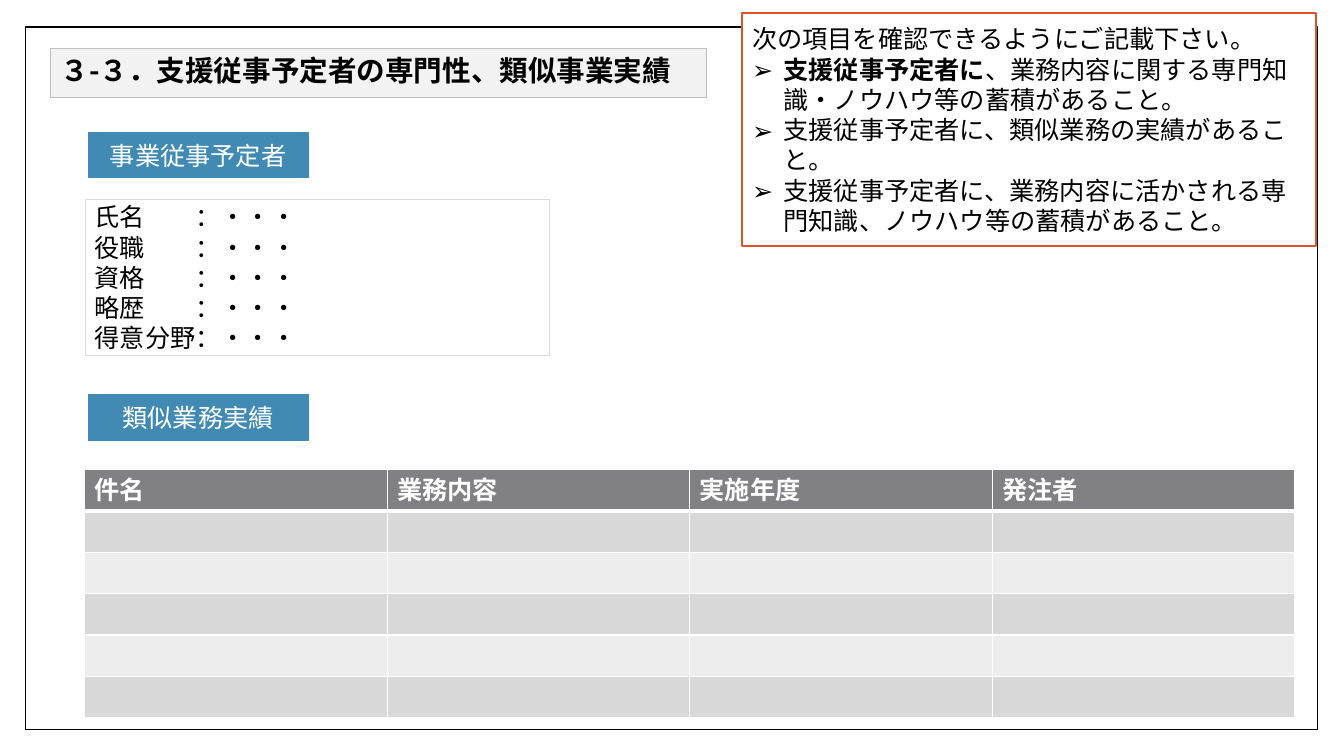
import pptx
import pptx.util
import pptx.dml.color
import pptx.enum.shapes
import pptx.enum.text
import pptx.oxml.ns
import lxml.etree

PX = 9144
SLIDE = (1333, 750)
NOTO = "Noto Sans CJK JP"
LEFT = pptx.enum.text.PP_ALIGN.LEFT
CENTER = pptx.enum.text.PP_ALIGN.CENTER

FRAME = (25, 27, 1282, 697)
TITLE = "３-３．支援従事予定者の専門性、類似事業実績"
TITLE_BOX = (50, 48, 651, 49)
SECTIONS = [("事業従事予定者", 128), ("類似業務実績", 388)]
SECTION_LEFT, SECTION_WIDTH, SECTION_HEIGHT = 84, 225, 52
PROFILE = [
    "氏名　　：・・・",
    "役職　　：・・・",
    "資格　　：・・・",
    "略歴　　：・・・",
    "得意分野：・・・",
]
PROFILE_BOX = (84, 198, 461, 154)
GUIDE_INTRO = "次の項目を確認できるようにご記載下さい。"
GUIDE_ITEMS = [
    ("支援従事予定者に", "、業務内容に関する専門知識・ノウハウ等の蓄積があること。"),
    ("", "支援従事予定者に、類似業務の実績があること。"),
    ("", "支援従事予定者に、業務内容に活かされる専門知識、ノウハウ等の蓄積があること。"),
]
GUIDE_BOX = (736, 13, 569, 231)
GUIDE_INDENT = 31
RECORD_HEADERS = ["件名", "業務内容", "実施年度", "発注者"]
RECORD_ROWS = 6
RECORD_BOX = (84, 466, 1200, 246)
RECORD_FILLS = ["EDEDED", "D8D8D9"]


def color(value):
    return pptx.dml.color.RGBColor.from_string(value)


def emu(lengths):
    return [length * PX for length in lengths]


def add_child(parent, tag, **attributes):
    return lxml.etree.SubElement(parent, pptx.oxml.ns.qn(tag), attributes)


def style_paragraph(paragraph, size=18, ink="000000", bold=False, align=LEFT, face=NOTO):
    paragraph.alignment = align
    paragraph.space_before = pptx.util.Pt(0)
    font = paragraph.font
    font.name = face
    font.size = pptx.util.Pt(size)
    font.bold = bold
    font.color.rgb = color(ink)
    add_child(paragraph._p.pPr.find(pptx.oxml.ns.qn("a:defRPr")), "a:ea", typeface=face)


def style_box(shape, box, fill, line, width):
    shape.left, shape.top, shape.width, shape.height = emu(box)
    shape.fill.solid()
    shape.fill.fore_color.rgb = color(fill)
    shape.line.color.rgb = color(line)
    shape.line.width = pptx.util.Pt(width)
    frame = shape.text_frame
    frame.word_wrap = True
    frame.auto_size = pptx.enum.text.MSO_AUTO_SIZE.NONE
    frame.vertical_anchor = pptx.enum.text.MSO_ANCHOR.MIDDLE
    return frame


def add_box(slide, box, fill, line, width):
    shape = slide.shapes.add_shape(pptx.enum.shapes.MSO_SHAPE.RECTANGLE, *emu(box))
    shape.shadow.inherit = False
    style_box(shape, box, fill, line, width)
    return shape


def set_bullet(paragraph, mark, indent):
    properties = paragraph._p.get_or_add_pPr()
    properties.set("marL", str(indent * PX))
    properties.set("indent", str(-indent * PX))
    if mark:
        add_child(properties, "a:buFont", typeface="Wingdings" if mark == "Ø" else NOTO)
        add_child(properties, "a:buChar", char=mark)
    else:
        add_child(properties, "a:buNone")


def set_borders(cell, bottom):
    properties = cell._tc.get_or_add_tcPr()
    for side, width in (("L", 1), ("R", 1), ("T", 1), ("B", bottom)):
        border = add_child(properties, f"a:ln{side}", w=str(pptx.util.Pt(width)))
        add_child(add_child(border, "a:solidFill"), "a:srgbClr", val="FFFFFF")


def add_guide(guide):
    text = style_box(guide, GUIDE_BOX, "FFFFFF", "DF5327", 1.5)
    intro = text.paragraphs[0]
    intro.text = GUIDE_INTRO
    set_bullet(intro, None, 0)
    style_paragraph(intro)
    for emphasis, rest in GUIDE_ITEMS:
        item = text.add_paragraph()
        if emphasis:
            run = item.add_run()
            run.text = emphasis
            run.font.bold = True
        item.add_run().text = rest
        set_bullet(item, "➢", GUIDE_INDENT)
        style_paragraph(item)


def add_records(slide):
    columns = len(RECORD_HEADERS)
    records = slide.shapes.add_table(RECORD_ROWS, columns, *emu(RECORD_BOX)).table
    for row in range(RECORD_ROWS):
        for column in range(columns):
            cell = records.cell(row, column)
            set_borders(cell, 3 if row == 0 else 1)
            cell.fill.solid()
            cell.fill.fore_color.rgb = color(RECORD_FILLS[row % 2] if row else "818183")
    for column, header in enumerate(RECORD_HEADERS):
        heading = records.cell(0, column).text_frame.paragraphs[0]
        heading.text = header
        style_paragraph(heading, ink="FFFFFF", bold=True, face="Cabin")


def main():
    deck = pptx.Presentation()
    deck.slide_width, deck.slide_height = emu(SLIDE)
    slide = deck.slides.add_slide(deck.slide_layouts[1])
    title, guide = slide.placeholders

    frame = add_box(slide, FRAME, "FFFFFF", "000000", 1)
    title._element.addprevious(frame._element)

    heading = style_box(title, TITLE_BOX, "F2F2F2", "BFBFBF", 0.75).paragraphs[0]
    heading.text = TITLE
    heading.line_spacing = 0.8
    style_paragraph(heading, size=20.4, bold=True)

    for label, top in SECTIONS:
        box = (SECTION_LEFT, top, SECTION_WIDTH, SECTION_HEIGHT)
        section = add_box(slide, box, "418AB3", "FFFFFF", 4.25)
        caption = section.text_frame.paragraphs[0]
        caption.text = label
        style_paragraph(caption, ink="FFFFFF", align=CENTER)

    profile = add_box(slide, PROFILE_BOX, "FFFFFF", "D9D9D9", 0.25)
    profile.text_frame.text = "\n".join(PROFILE)
    for field in profile.text_frame.paragraphs:
        style_paragraph(field)

    add_records(slide)
    add_guide(guide)
    deck.save("out.pptx")


if __name__ == "__main__":
    main()
